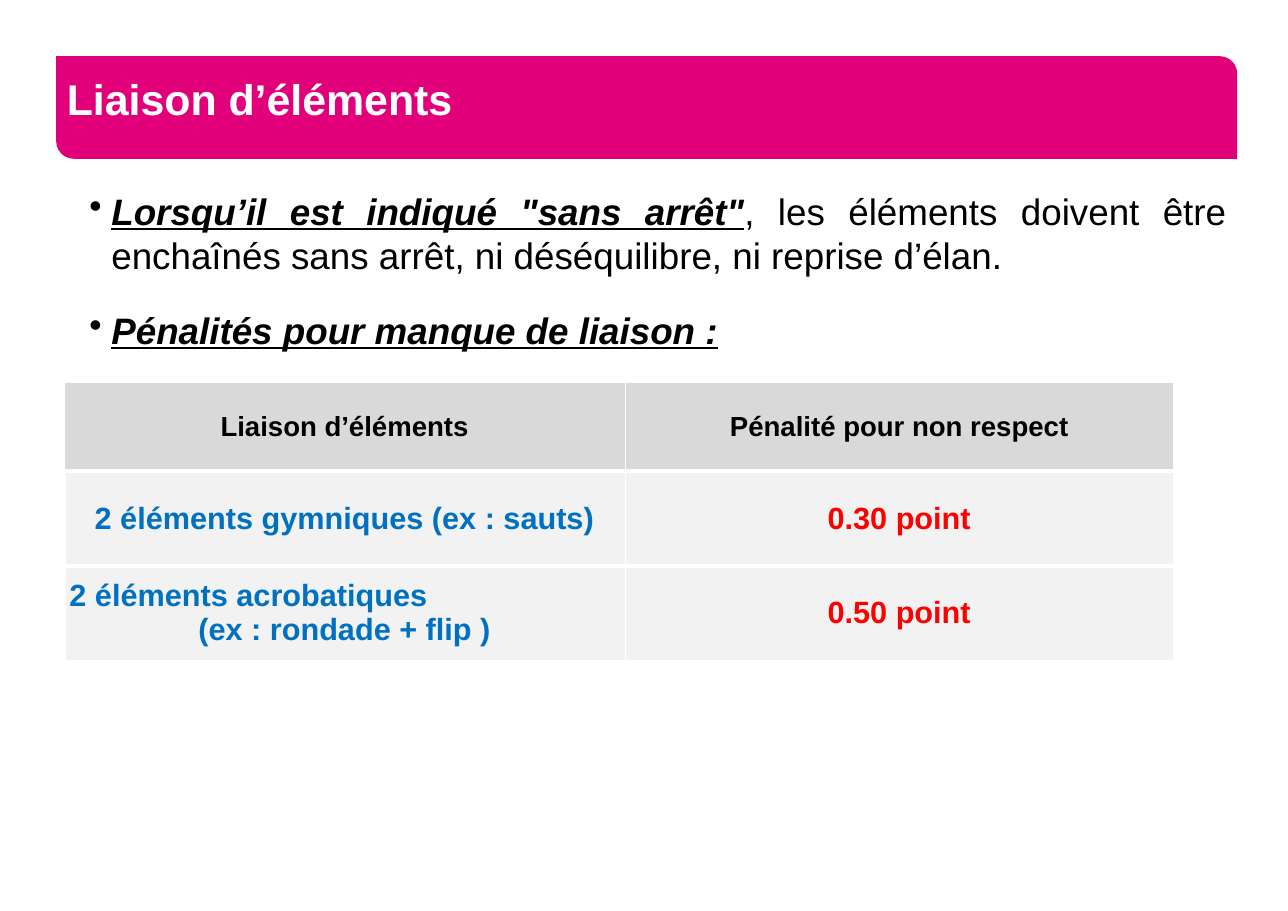
import pptx
import pptx.dml.color
import pptx.enum.shapes
import pptx.enum.text
import pptx.oxml
import pptx.oxml.ns
import pptx.util
from pptx.util import Inches

ALIGN = pptx.enum.text.PP_ALIGN
MIDDLE = pptx.enum.text.MSO_ANCHOR.MIDDLE
PINK, WHITE, BLACK = "E2007A", "FFFFFF", "000000"
BLUE, RED = "0070C0", "FF0000"
HEADER_GREY, ROW_GREY = "D9D9D9", "F2F2F2"
MARGIN = Inches(0.05)


def color(value):
    return pptx.dml.color.RGBColor.from_string(value)


def set_font(font, size, value, bold=True):
    font.name = "Arial"
    font.size = pptx.util.Pt(size)
    font.bold = bold
    font.color.rgb = color(value)


def set_margins(box):
    box.margin_left = box.margin_right = MARGIN
    box.margin_top = box.margin_bottom = MARGIN


def add_title(slide, text):
    shape = slide.shapes.add_shape(
        pptx.enum.shapes.MSO_SHAPE.ROUND_2_DIAG_RECTANGLE,
        Inches(0.51), Inches(0.51), Inches(10.71), Inches(0.93))
    shape.adjustments[0] = 0
    shape.adjustments[1] = 0.17
    shape.shadow.inherit = False
    shape.fill.solid()
    shape.fill.fore_color.rgb = color(PINK)
    shape.line.fill.background()
    text_frame = shape.text_frame
    set_margins(text_frame)
    text_frame.vertical_anchor = MIDDLE
    text_frame.text = text
    paragraph = text_frame.paragraphs[0]
    paragraph.alignment = ALIGN.LEFT
    paragraph.line_spacing = pptx.util.Pt(22)
    set_font(paragraph.runs[0].font, 28, WHITE)


def add_bullet(paragraph):
    properties = paragraph._p.get_or_add_pPr()
    properties.set("marL", str(Inches(0.4)))
    properties.set("indent", str(Inches(-0.2)))
    properties.append(pptx.oxml.parse_xml(
        f'<a:buChar {pptx.oxml.ns.nsdecls("a")} char="•"/>'))


def add_bullets(slide, items):
    shape = slide.shapes.add_textbox(
        Inches(0.56), Inches(1.66), Inches(10.61), Inches(1.6))
    text_frame = shape.text_frame
    text_frame.word_wrap = True
    set_margins(text_frame)
    for index, (heading, detail) in enumerate(items):
        paragraph = text_frame.add_paragraph() if index else text_frame.paragraphs[0]
        add_bullet(paragraph)
        paragraph.alignment = ALIGN.JUSTIFY
        if index:
            paragraph.space_before = pptx.util.Pt(20)
        paragraph.text = heading
        font = paragraph.runs[0].font
        set_font(font, 24, BLACK)
        font.italic = font.underline = True
        if detail:
            run = paragraph.add_run()
            run.text = detail
            set_font(run.font, 24, BLACK, bold=False)


def set_borders(cell, widths):
    properties = cell._tc.get_or_add_tcPr()
    for index, (side, width) in enumerate(zip("LRTB", widths)):
        properties.insert(index, pptx.oxml.parse_xml(
            f'<a:ln{side} {pptx.oxml.ns.nsdecls("a")} w="{pptx.util.Pt(width)}">'
            f'<a:solidFill><a:srgbClr val="{WHITE}"/></a:solidFill></a:ln{side}>'))


def fill_cell(cell, text, size, text_color, background):
    set_margins(cell)
    cell.vertical_anchor = MIDDLE
    cell.fill.solid()
    cell.fill.fore_color.rgb = color(background)
    cell.text_frame.text = text
    paragraphs = cell.text_frame.paragraphs
    for paragraph in paragraphs:
        paragraph.alignment = ALIGN.CENTER
        set_font(paragraph.runs[0].font, size, text_color)
    if len(paragraphs) > 1:
        paragraphs[0].alignment = ALIGN.LEFT


def add_penalty_table(slide, rows):
    widths, heights = (5.09, 4.97), (0.8, 0.86, 0.86)
    table = slide.shapes.add_table(
        len(rows), len(widths), Inches(0.58), Inches(3.47),
        Inches(sum(widths)), Inches(sum(heights))).table
    for column, width in zip(table.columns, widths):
        column.width = Inches(width)
    for row, height in zip(table.rows, heights):
        row.height = Inches(height)
    last = len(rows) - 1
    for row_index, texts in enumerate(rows):
        header = row_index == 0
        for column_index, text in enumerate(texts):
            cell = table.cell(row_index, column_index)
            if header:
                fill_cell(cell, text, 18, BLACK, HEADER_GREY)
            else:
                fill_cell(cell, text, 20, (BLUE, RED)[column_index], ROW_GREY)
            left = 1 if header or column_index else 3
            set_borders(cell, (left, 1, 1 if header else 3,
                               1 if row_index == last else 3))


def main():
    presentation = pptx.Presentation()
    presentation.slide_width = Inches(11.68)
    presentation.slide_height = Inches(8.26)
    slide = presentation.slides.add_slide(presentation.slide_layouts[6])
    add_title(slide, "Liaison d’éléments")
    add_bullets(slide, [
        ('Lorsqu’il est indiqué "sans arrêt"',
         ", les éléments doivent être enchaînés sans arrêt, "
         "ni déséquilibre, ni reprise d’élan."),
        ("Pénalités pour manque de liaison :", ""),
    ])
    add_penalty_table(slide, [
        ("Liaison d’éléments", "Pénalité pour non respect"),
        ("2 éléments gymniques (ex : sauts)", "0.30 point"),
        ("2 éléments acrobatiques\n(ex : rondade + flip )", "0.50 point"),
    ])
    presentation.save("out.pptx")


if __name__ == "__main__":
    main()
